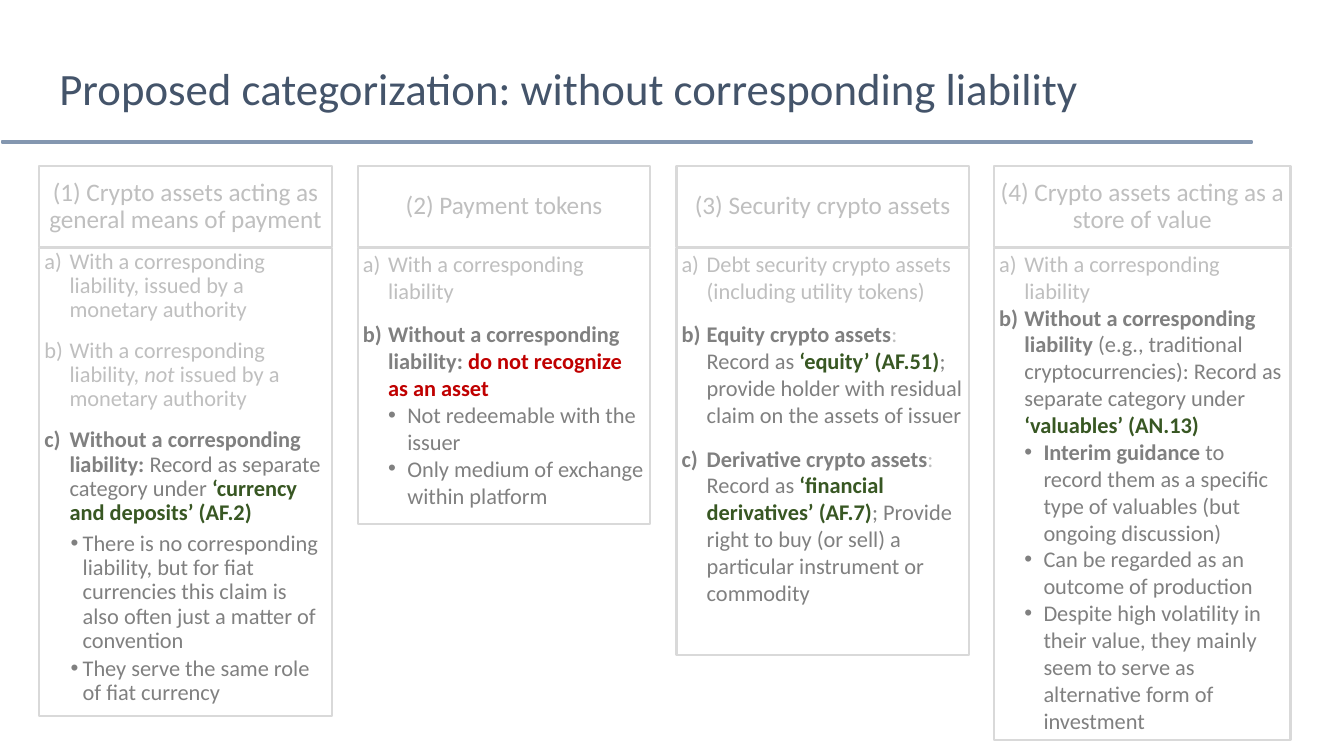
"""Build a slide categorizing crypto assets without a corresponding liability."""
from lxml import etree
from pptx import Presentation
from pptx.dml.color import RGBColor
from pptx.enum.shapes import MSO_SHAPE
from pptx.enum.text import MSO_ANCHOR, PP_ALIGN
from pptx.oxml.ns import qn
from pptx.util import Inches, Pt

RECTANGLE = MSO_SHAPE.RECTANGLE
TOP, MIDDLE = MSO_ANCHOR.TOP, MSO_ANCHOR.MIDDLE
LEFT, CENTER = PP_ALIGN.LEFT, PP_ALIGN.CENTER

STYLES = {
    "faded": ("BFBFBF", False, False),
    "faded italic": ("BFBFBF", False, True),
    "plain": ("808080", False, False),
    "bold": ("808080", True, False),
    "green": ("385723", True, False),
    "red": ("C00000", True, False),
    "title": ("44546A", False, False),
}
BULLETS = {
    "letter": (0.25, 0.25, "buAutoNum", "type", "alphaLcParenR"),
    "dot": (0.44, 0.19, "buChar", "char", "•"),
    "tight dot": (0.38, 0.12, "buChar", "char", "•"),
}

COLUMNS = [
    ("(1) Crypto assets acting as general means of payment", 0.39, 2.9, 4.64, 0.9, [
        ("letter", 12, [("With a corresponding liability, issued by a monetary authority", "faded")]),
        ("letter", 12, [("With a corresponding liability, ", "faded"), ("not", "faded italic"),
                        (" issued by a monetary authority", "faded")]),
        ("letter", 12, [("Without a corresponding liability: ", "bold"),
                        ("Record as separate category under ", "plain"),
                        ("‘currency and deposits’ (AF.2)", "green")]),
        ("tight dot", 5, [("There is no corresponding liability, but for fiat currencies "
                           "this claim is also often just a matter of convention", "plain")]),
        ("tight dot", 3, [("They serve the same role of fiat currency", "plain")]),
    ]),
    ("(2) Payment tokens", 3.55, 2.9, 2.74, 1.0, [
        ("letter", 12, [("With a corresponding liability", "faded")]),
        ("letter", 12, [("Without a corresponding liability: ", "bold"),
                        ("do not recognize as an asset", "red")]),
        ("dot", 0, [("Not redeemable with the issuer", "plain")]),
        ("dot", 0, [("Only medium of exchange within platform", "plain")]),
    ]),
    ("(3) Security crypto assets", 6.71, 2.9, 4.04, 1.0, [
        ("letter", 12, [("Debt security crypto assets (including utility tokens)", "faded")]),
        ("letter", 12, [("Equity crypto assets", "bold"), (": ", "faded"), ("Record as ", "plain"),
                        ("‘equity’ (AF.51)", "green"),
                        ("; provide holder with residual claim on the assets of issuer", "plain")]),
        ("letter", 12, [("Derivative crypto assets", "bold"), (": ", "faded"), ("Record as ", "plain"),
                        ("‘financial derivatives’ (AF.7)", "green"),
                        ("; Provide right to buy (or sell) a particular instrument or commodity", "plain")]),
    ]),
    ("(4) Crypto assets acting as a store of value", 9.86, 2.94, 4.88, 1.0, [
        ("letter", 0, [("With a corresponding liability", "faded")]),
        ("letter", 0, [("Without a corresponding liability ", "bold"),
                       ("(e.g., traditional cryptocurrencies): Record as separate category under ", "plain"),
                       ("‘valuables’ (AN.13)", "green")]),
        ("dot", 0, [("Interim guidance", "bold"),
                    (" to record them as a specific type of valuables (but ongoing discussion)", "plain")]),
        ("dot", 0, [("Can be regarded as an outcome of production", "plain")]),
        ("dot", 0, [("Despite high volatility in their value, they mainly seem to serve "
                     "as alternative form of investment", "plain")]),
    ]),
]


def color(hex_string):
    return RGBColor.from_string(hex_string)


def fill_text(shape, paragraphs, size, spacing, anchor, align, inset_x, inset_y):
    frame = shape.text_frame
    frame.word_wrap = True
    frame.vertical_anchor = anchor
    frame.margin_left = frame.margin_right = Inches(inset_x)
    frame.margin_top = frame.margin_bottom = Inches(inset_y)
    for index, (bullet, space_before, runs) in enumerate(paragraphs):
        paragraph = frame.add_paragraph() if index else frame.paragraphs[0]
        paragraph.alignment = align
        paragraph.line_spacing = spacing
        paragraph.space_before = Pt(space_before)
        if bullet:
            margin, hanging, tag, attribute, value = BULLETS[bullet]
            properties = paragraph._p.get_or_add_pPr()
            properties.set("marL", str(Inches(margin)))
            properties.set("indent", str(-Inches(hanging)))
            if tag == "buChar":
                etree.SubElement(properties, qn("a:buFont")).set("typeface", "Arial")
            etree.SubElement(properties, qn("a:" + tag)).set(attribute, value)
        for text, style in runs:
            run = paragraph.add_run()
            run.text = text
            run.font.name = "Calibri"
            run.font.size = Pt(size)
            hex_string, run.font.bold, run.font.italic = STYLES[style]
            run.font.color.rgb = color(hex_string)


presentation = Presentation()
presentation.slide_width = Inches(13.33)
presentation.slide_height = Inches(7.5)
slide = presentation.slides.add_slide(presentation.slide_layouts[6])

rule = slide.shapes.add_shape(RECTANGLE, Inches(0.02), Inches(1.4), Inches(12.4), Inches(0.02))
rule.shadow.inherit = False
rule.fill.solid()
rule.fill.fore_color.rgb = color("8497B0")
rule.line.color.rgb = color("8497B0")
rule.line.width = Pt(1)

title = slide.shapes.add_textbox(Inches(0.49), Inches(0.4), Inches(11.92), Inches(1.01))
title_runs = [("Proposed categorization: without corresponding liability", "title")]
fill_text(title, [(None, 0, title_runs)], 32, 0.9, MIDDLE, LEFT, 0.1, 0.05)

for heading, left, width, body_height, spacing, details in COLUMNS:
    header = slide.shapes.add_shape(RECTANGLE, Inches(left), Inches(1.65), Inches(width), Inches(0.8))
    body = slide.shapes.add_shape(RECTANGLE, Inches(left), Inches(2.46), Inches(width), Inches(body_height))
    for box in (header, body):
        box.shadow.inherit = False
        box.fill.background()
        box.line.color.rgb = color("D9D9D9")
        box.line.width = Pt(1.5)
    fill_text(header, [(None, 10, [(heading, "faded")])], 18, 0.9, MIDDLE, CENTER, 0.05, 0)
    fill_text(body, details, 16, spacing, TOP, LEFT, 0.05, 0.02)

presentation.save("out.pptx")
